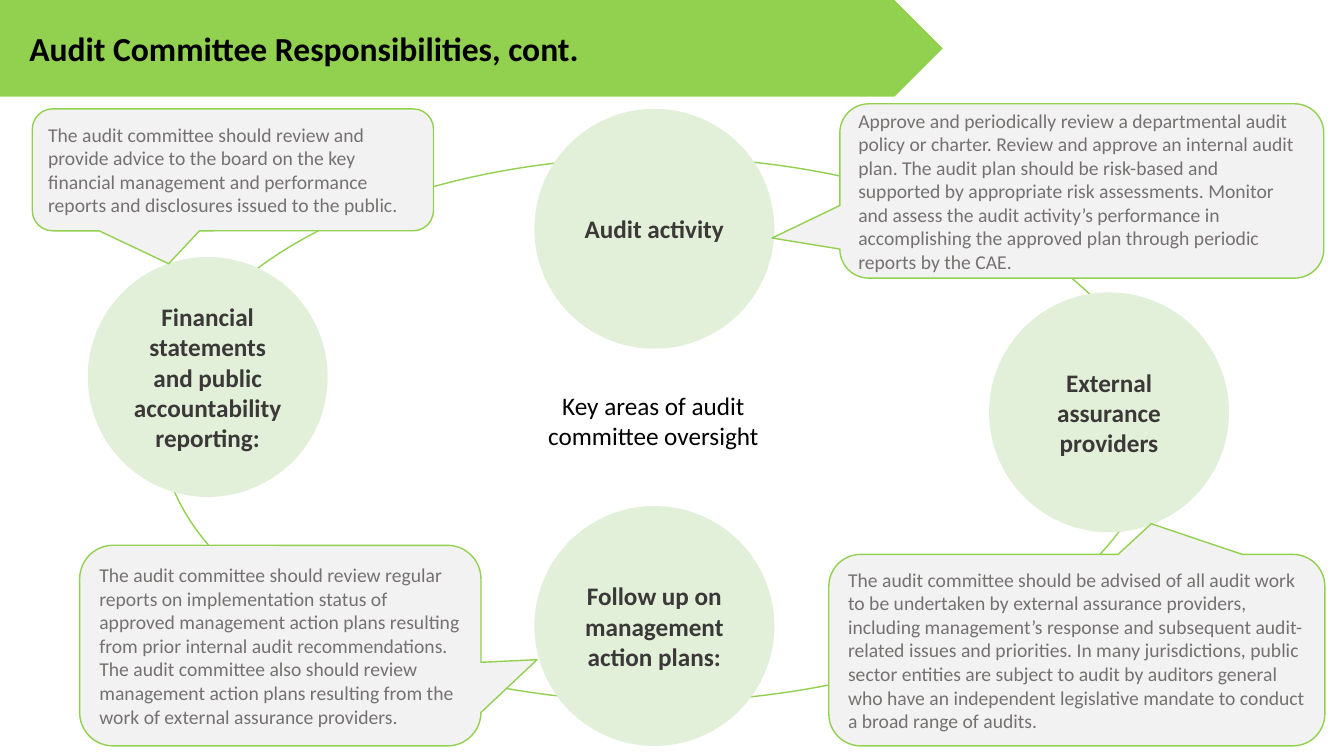
"""Build a slide on the areas an audit committee oversees."""
from pptx import Presentation
from pptx.dml.color import RGBColor
from pptx.enum.shapes import MSO_SHAPE
from pptx.enum.text import MSO_ANCHOR, MSO_AUTO_SIZE, PP_ALIGN
from pptx.util import Inches, Pt

OVAL = MSO_SHAPE.OVAL
PLATE = MSO_SHAPE.PENTAGON
CALLOUT = MSO_SHAPE.ROUNDED_RECTANGULAR_CALLOUT
MIDDLE, TOP = MSO_ANCHOR.MIDDLE, MSO_ANCHOR.TOP
LEFT, CENTER = PP_ALIGN.LEFT, PP_ALIGN.CENTER
FIXED = MSO_AUTO_SIZE.NONE

COLORS = {
    "green": "92D050",
    "pale": "E2F0D9",
    "panel": "F2F2F2",
    "black": "000000",
    "dark": "3B3838",
    "gray": "767171",
}


def add_box(kind, box, fill=None, line=None):
    shape = slide.shapes.add_shape(kind, *map(Inches, box))
    shape.shadow.inherit = False
    if fill:
        shape.fill.solid()
        shape.fill.fore_color.rgb = RGBColor.from_string(COLORS[fill])
    else:
        shape.fill.background()
    if line:
        shape.line.color.rgb = RGBColor.from_string(COLORS[line])
        shape.line.width = Pt(1)
    else:
        shape.line.fill.background()
    return shape


def write(shape, text, size, color, bold=False, align=LEFT, anchor=MIDDLE):
    frame = shape.text_frame
    frame.word_wrap = True
    frame.auto_size = FIXED
    frame.vertical_anchor = anchor
    para = frame.paragraphs[0]
    para.alignment = align
    run = para.add_run()
    run.text = text
    run.font.name = "Calibri"
    run.font.size = Pt(size)
    run.font.bold = bold
    run.font.color.rgb = RGBColor.from_string(COLORS[color])


deck = Presentation()
deck.slide_width, deck.slide_height = Inches(13.33), Inches(7.5)
slide = deck.slides.add_slide(deck.slide_layouts[5])

add_box(OVAL, (1.6, 1.56, 9.86, 5.4), line="green")

banner = add_box(PLATE, (0, 0, 9.35, 0.96), "green")
title = slide.shapes.title
title.left, title.top = Inches(0), Inches(0)
title.width, title.height = Inches(8.87), Inches(0.96)
title.text_frame.margin_left = Inches(0.29)
write(title, "Audit Committee Responsibilities, cont.", 24, "black", bold=True)
banner._element.addnext(title._element)

center = slide.shapes.add_textbox(Inches(5.05), Inches(3.82), Inches(2.86), Inches(0.71))
write(center, "Key areas of audit committee oversight", 18, "black", align=CENTER, anchor=TOP)

SIZE = 2.38
areas = [
    (5.3, 1.08, "Audit activity"),
    (5.3, 5.02, "Follow up on management action plans:"),
    (0.87, 2.55, "Financial statements and public accountability reporting:"),
    (9.81, 2.9, "External assurance providers"),
]
for x, y, text in areas:
    area = add_box(OVAL, (x, y, SIZE, SIZE), "pale")
    write(area, text, 18, "dark", bold=True, align=CENTER)

notes = [
    ((8.33, 1.03, 4.8, 1.73), (-0.64, 0.27),
     "Approve and periodically review a departmental audit policy or charter. "
     "Review and approve an internal audit plan. The audit plan should be "
     "risk-based and supported by appropriate risk assessments. Monitor and "
     "assess the audit activity’s performance in accomplishing the approved "
     "plan through periodic reports by the CAE."),
    ((8.22, 5.5, 4.92, 1.9), (0.15, -0.66),
     "The audit committee should be advised of all audit work to be undertaken "
     "by external assurance providers, including management’s response and "
     "subsequent audit-related issues and priorities. In many jurisdictions, "
     "public sector entities are subject to audit by auditors general who have "
     "an independent legislative mandate to conduct a broad range of audits."),
    ((0.79, 5.41, 3.98, 1.99), (0.64, 0.07),
     "The audit committee should review regular reports on implementation "
     "status of approved management action plans resulting from prior internal "
     "audit recommendations. The audit committee also should review management "
     "action plans resulting from the work of external assurance providers."),
    ((0.32, 1.08, 3.98, 1.21), (-0.16, 0.77),
     "The audit committee should review and provide advice to the board on the "
     "key financial management and performance reports and disclosures issued "
     "to the public."),
]
for box, tip, text in notes:
    note = add_box(CALLOUT, box, "panel", "green")
    note.adjustments[0], note.adjustments[1] = tip
    write(note, text, 14, "gray")

deck.save("out.pptx")
